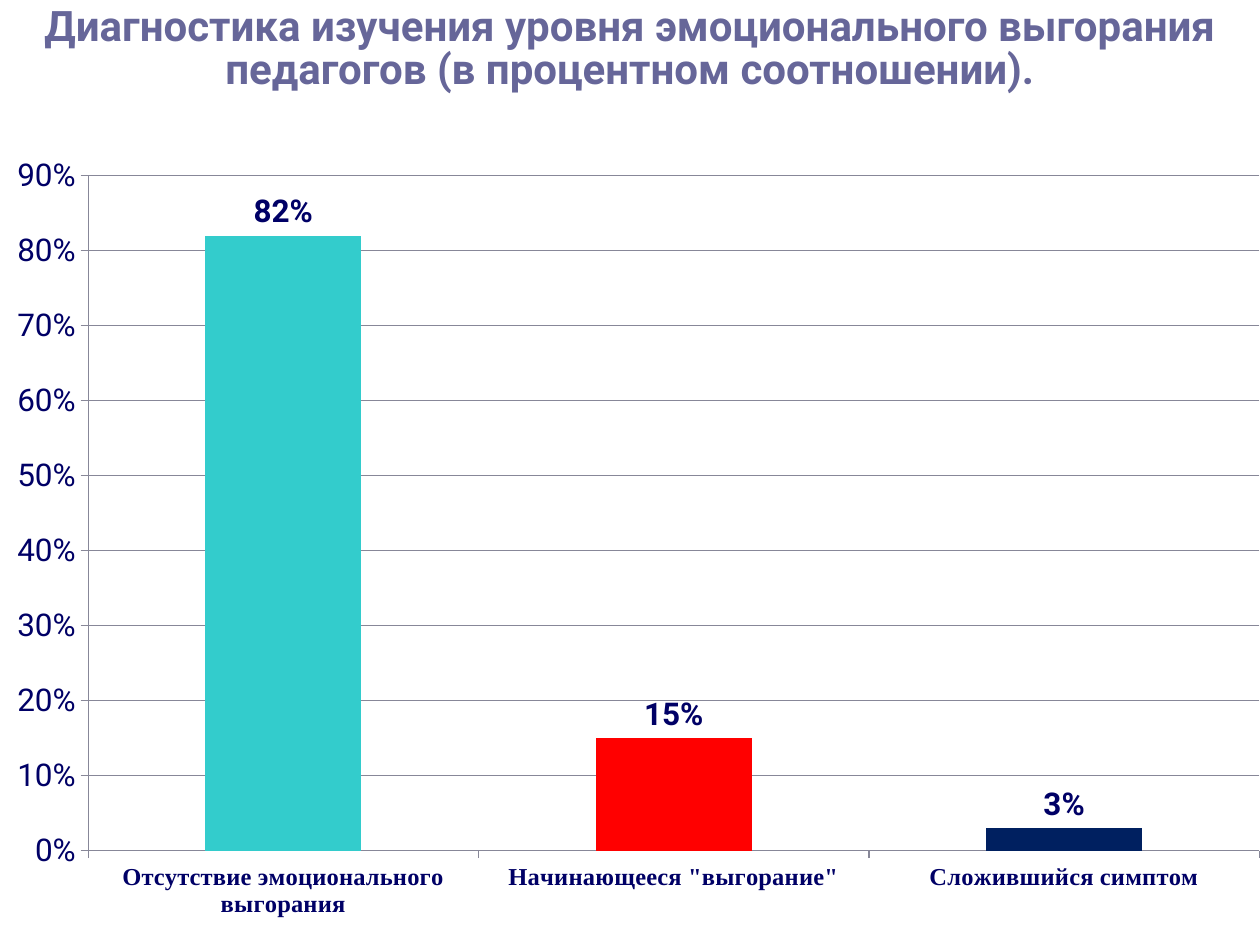
from dataclasses import dataclass

from lxml.etree import SubElement
from pptx import Presentation
from pptx.chart.data import CategoryChartData
from pptx.dml.color import RGBColor
from pptx.enum.chart import XL_CHART_TYPE, XL_LABEL_POSITION, XL_TICK_MARK
from pptx.enum.text import MSO_ANCHOR, PP_ALIGN
from pptx.oxml.ns import qn
from pptx.util import Inches, Pt


@dataclass(frozen=True)
class Theme:
    font: str = "Roboto"
    category_font: str = "Times New Roman"
    title_color: str = "666699"
    text_color: str = "000066"
    grid_color: str = "878798"
    bar_colors: tuple = ("33CCCC", "FF0000", "002060")
    title_size: int = 24
    chart_size: int = 18
    category_size: int = 14


class SlideBuilder:
    def __init__(self, deck, theme):
        self.deck = deck
        self.theme = theme
        self.page = deck.slides.add_slide(deck.slide_layouts[5])

    def area(self, left, top, width, height):
        """Turn shares of the slide into lengths."""
        across, down = self.deck.slide_width, self.deck.slide_height
        return (round(left * across), round(top * down),
                round(width * across), round(height * down))

    def style_font(self, font, name, size, color, bold):
        font.name = name
        font.size = Pt(size)
        font.bold = bold
        font.color.rgb = RGBColor.from_string(color)

    def style_line(self, line):
        line.color.rgb = RGBColor.from_string(self.theme.grid_color)
        line.width = Pt(0.75)

    def title(self, text, shares):
        theme = self.theme
        box = self.page.shapes.title
        box.left, box.top, box.width, box.height = self.area(*shares)
        frame = box.text_frame
        frame.text = text
        frame.word_wrap = True
        frame.vertical_anchor = MSO_ANCHOR.MIDDLE
        para = frame.paragraphs[0]
        para.alignment = PP_ALIGN.CENTER
        para.line_spacing = 0.85
        self.style_font(para.runs[0].font, theme.font, theme.title_size,
                        theme.title_color, True)

    def column_chart(self, shares, series_name, values, plot_shares):
        theme = self.theme
        data = CategoryChartData(number_format="0%")
        data.categories = list(values)
        data.add_series(series_name, values.values())
        chart = self.page.shapes.add_chart(
            XL_CHART_TYPE.COLUMN_CLUSTERED, *self.area(*shares), data).chart
        chart.has_legend = False
        chart.has_title = False
        self.style_font(chart.font, theme.font, theme.chart_size,
                        theme.text_color, False)

        # Axes and gridlines
        for axis in (chart.category_axis, chart.value_axis):
            axis.major_tick_mark = XL_TICK_MARK.OUTSIDE
            axis.minor_tick_mark = XL_TICK_MARK.NONE
            self.style_line(axis.format.line)
        self.style_font(chart.category_axis.tick_labels.font,
                        theme.category_font, theme.category_size,
                        theme.text_color, True)
        scale = chart.value_axis
        scale.minimum_scale, scale.maximum_scale, scale.major_unit = 0, 0.9, 0.1
        scale.has_major_gridlines = True
        self.style_line(scale.major_gridlines.format.line)
        scale.tick_labels.number_format = "0%"
        scale.tick_labels.number_format_is_linked = False

        # Bars and their values
        plot = chart.plots[0]
        plot.gap_width = 150
        plot.vary_by_categories = False
        series = plot.series[0]
        series.format.fill.solid()
        series.format.fill.fore_color.rgb = RGBColor.from_string(theme.bar_colors[0])
        for index, color in enumerate(theme.bar_colors[1:], start=1):
            fill = series.points[index].format.fill
            fill.solid()
            fill.fore_color.rgb = RGBColor.from_string(color)
        labels = series.data_labels
        labels.show_value = True
        labels.position = XL_LABEL_POSITION.OUTSIDE_END
        labels.number_format = "0%"
        labels.number_format_is_linked = False
        self.style_font(labels.font, theme.font, theme.chart_size,
                        theme.text_color, True)
        self.place_plot(chart, plot_shares)

    def place_plot(self, chart, shares):
        """Fix the inner plot area as shares of the chart."""
        plot_area = chart.plots[0]._element.getparent()
        layout = plot_area.find(qn("c:layout"))
        if layout is None:
            layout = SubElement(plot_area, qn("c:layout"))
            plot_area.insert(0, layout)
        manual = SubElement(layout, qn("c:manualLayout"))
        settings = [("layoutTarget", "inner"), ("xMode", "edge"), ("yMode", "edge")]
        settings += zip("xywh", shares)
        for tag, value in settings:
            SubElement(manual, qn(f"c:{tag}")).set("val", str(value))


def main():
    deck = Presentation()
    deck.slide_width, deck.slide_height = Inches(10), Inches(7.5)
    builder = SlideBuilder(deck, Theme())

    # Heading
    builder.title(
        "Диагностика изучения уровня эмоционального выгорания педагогов "
        "(в процентном соотношении).",
        (0, 0, 1, 0.79 / 7.5))

    # Share of teachers at each burnout level
    burnout = {
        "Отсутствие эмоционального выгорания": 0.82,
        'Начинающееся "выгорание"': 0.15,
        "Сложившийся симптом": 0.03,
    }
    builder.column_chart((0, 1 / 6, 1, 5 / 6), "Series 1", burnout,
                         plot_shares=(0.07, 0.02, 0.93, 0.86))

    deck.save("out.pptx")


if __name__ == "__main__":
    main()
